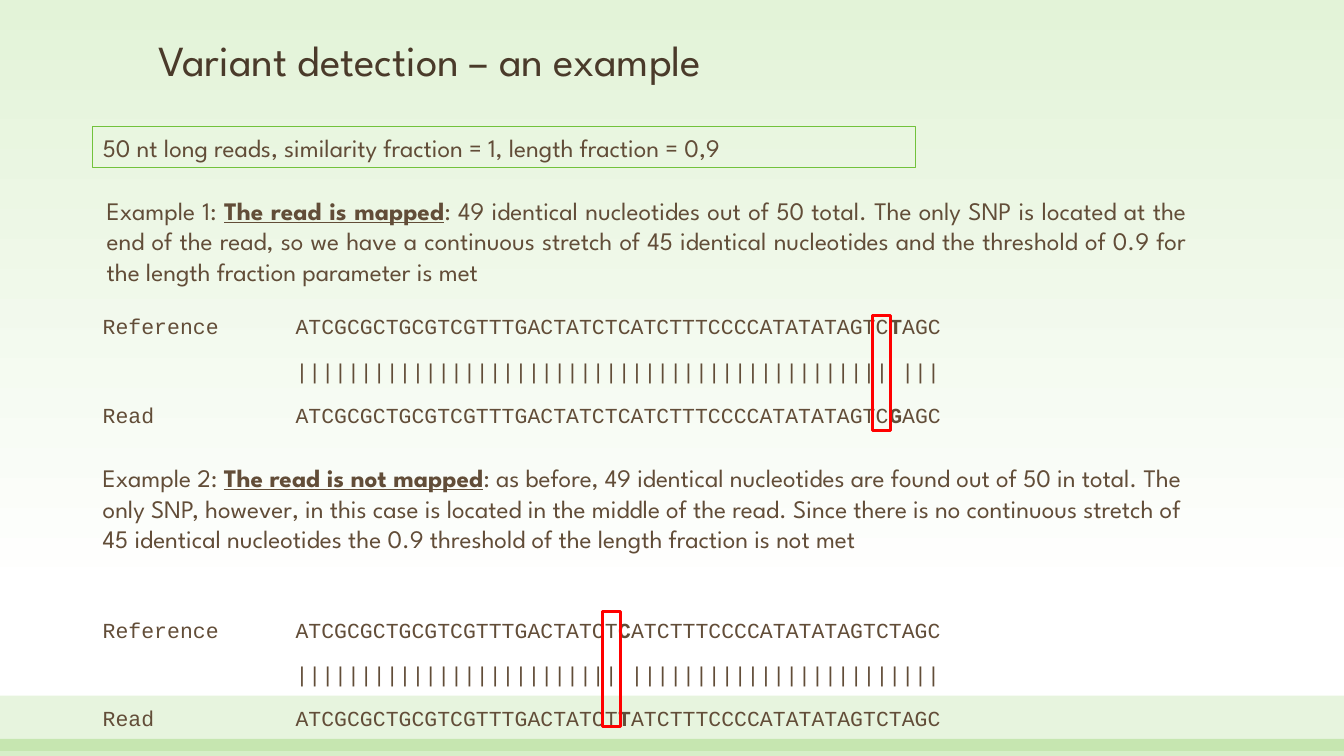
from dataclasses import dataclass
from lxml import etree
from pptx import Presentation, util as u
from pptx.dml.color import RGBColor
from pptx.enum import shapes, text
from pptx.oxml import ns


@dataclass(frozen=True)
class Theme:
    sans: str = "League Spartan"
    mono: str = "Courier New"
    title: str = "4A3A2A"
    body: str = "624D38"
    green: str = "72C23C"
    pale: str = "E3F3D8"
    white: str = "FFFFFF"
    red: str = "FF0000"
    title_size: float = 30.6
    body_size: float = 18
    code_size: float = 15.3


def rgb(value):
    return RGBColor.from_string(value)


class SlideBuilder:
    """Places elements on a grid with cells of a tenth of an inch."""

    CELL = 0.1

    def __init__(self, prs, theme):
        self.theme = theme
        self.s = prs.slides.add_slide(prs.slide_layouts[5])

    def grid(self, *cells):
        return [u.Inches(c * self.CELL) for c in cells]

    def background(self):
        fill = self.s.background.fill
        fill.gradient()
        fill.gradient_angle = 270
        stops = ((0, self.theme.pale), (0.79, self.theme.white))
        for stop, (position, color) in zip(fill.gradient_stops, stops):
            stop.position = position
            stop.color.rgb = rgb(color)

    def rect(self, cells, fill=None, alpha=100, line=None, width=1):
        sp = self.s.shapes.add_shape(shapes.MSO_SHAPE.RECTANGLE, *self.grid(*cells))
        sp.shadow.inherit = False
        if fill:
            sp.fill.solid()
            sp.fill.fore_color.rgb = rgb(fill)
            color = sp.fill._xPr.find(".//" + ns.qn("a:srgbClr"))
            etree.SubElement(color, ns.qn("a:alpha"), val=str(alpha * 1000))
        else:
            sp.fill.background()
        if line:
            sp.line.color.rgb = rgb(line)
            sp.line.width = u.Pt(width)
        else:
            sp.line.fill.background()
        return sp

    def runs(self, p, parts, **fmt):
        """Every second part is emphasised with the attributes in strong."""
        strong = fmt.pop("strong", {})
        color = fmt.pop("color", self.theme.body)
        for i, part in enumerate(parts):
            r = p.add_run()
            r.text = part
            r.font.color.rgb = rgb(color)
            for name, value in {**fmt, **(strong if i % 2 else {})}.items():
                setattr(r.font, name, value)

    def frame(self, sp, anchor=text.MSO_ANCHOR.TOP):
        tf = sp.text_frame
        settings = {"word_wrap": True, "auto_size": text.MSO_AUTO_SIZE.NONE,
                    "vertical_anchor": anchor}
        for name, value in settings.items():
            setattr(tf, name, value)
        return tf

    def title(self, cells, words):
        sp = self.s.shapes.title
        sp.left, sp.top, sp.width, sp.height = self.grid(*cells)
        p = self.frame(sp, text.MSO_ANCHOR.BOTTOM).paragraphs[0]
        p.alignment = text.PP_ALIGN.LEFT
        p.line_spacing = 0.9
        self.runs(p, [words], name=self.theme.sans,
                  size=u.Pt(self.theme.title_size), color=self.theme.title)

    def paragraph(self, cells, parts, align=text.PP_ALIGN.LEFT, border=None):
        if border:
            sp = self.rect(cells, line=border, width=0.75)
        else:
            sp = self.s.shapes.add_textbox(*self.grid(*cells))
        p = self.frame(sp).paragraphs[0]
        p.alignment = align
        self.runs(p, parts, name=self.theme.sans, size=u.Pt(self.theme.body_size),
                  strong={"bold": True, "underline": True})

    def alignment(self, left, top, marker_top, reference, snp, base):
        """Reference, match bars and read, with a frame just before the SNP."""
        char = self.theme.code_size * 0.6 / 72 / self.CELL
        indent = 15 * char
        before, after = reference[:snp], reference[snp + 1:]
        bars = ["|" * len(before) + " " + "|" * len(after)]
        rows = [("Reference", [before, reference[snp], after]),
                ("", bars),
                ("Read", [before, base, after])]
        sp = self.s.shapes.add_textbox(*self.grid(left, top, 111.2, 11.5))
        tf = self.frame(sp)
        for i, (label, parts) in enumerate(rows):
            p = tf.add_paragraph() if i else tf.paragraphs[0]
            tabs = etree.SubElement(p._p.get_or_add_pPr(), ns.qn("a:tabLst"))
            etree.SubElement(tabs, ns.qn("a:tab"), algn="l",
                             pos=str(self.grid(indent)[0]))
            p.line_spacing = 0.7
            if i:
                p.space_before = u.Pt(18.8)
            self.runs(p, [label + "\t" + parts[0], *parts[1:]], name=self.theme.mono,
                      size=u.Pt(self.theme.code_size), strong={"bold": True})
        marker_left = left + 1 + indent + (snp - 1) * char - 0.2
        self.rect((marker_left, marker_top, 1.8, 11.4), line=self.theme.red, width=2.25)


REFERENCE = "ATCGCGCTGCGTCGTTTGACTATCTCATCTTTCCCCATATATAGTCTAGC"


def main():
    prs = Presentation()
    prs.slide_width, prs.slide_height = u.Inches(13.33), u.Inches(7.5)
    theme = Theme()
    b = SlideBuilder(prs, theme)

    # Backdrop and footer bands
    b.background()
    b.rect((0, 69, 133.3, 5.5), fill=theme.green, alpha=17)
    b.rect((0, 73.3, 133.3, 1.7), fill=theme.green, alpha=28)

    # Title and mapping parameters
    b.title((14.7, 4.6, 104, 4.4), "Variant detection – an example")
    b.paragraph((9.2, 12.6, 81.6, 4),
                ["50 nt long reads, similarity fraction = 1, length fraction = 0,9"],
                border=theme.green)

    # Example 1: SNP near the end of the read
    b.paragraph((9.6, 18.9, 109.1, 10.1), [
        "Example 1: ", "The read is mapped",
        ": 49 identical nucleotides out of 50 total. The only SNP is located at the "
        "end of the read, so we have a continuous stretch of 45 identical nucleotides "
        "and the threshold of 0.9 for the length fraction parameter is met",
    ], align=text.PP_ALIGN.JUSTIFY)
    b.alignment(9.2, 31.3, 31.3, REFERENCE, snp=46, base="G")

    # Example 2: SNP in the middle of the read
    b.paragraph((9.2, 45.4, 109.1, 13.1), [
        "Example 2: ", "The read is not mapped",
        ": as before, 49 identical nucleotides are found out of 50 in total. The only "
        "SNP, however, in this case is located in the middle of the read. Since there "
        "is no continuous stretch of 45 identical nucleotides the 0.9 threshold of the "
        "length fraction is not met",
    ])
    b.alignment(9.2, 61.4, 60.7, REFERENCE, snp=25, base="T")

    prs.save("out.pptx")


if __name__ == "__main__":
    main()
